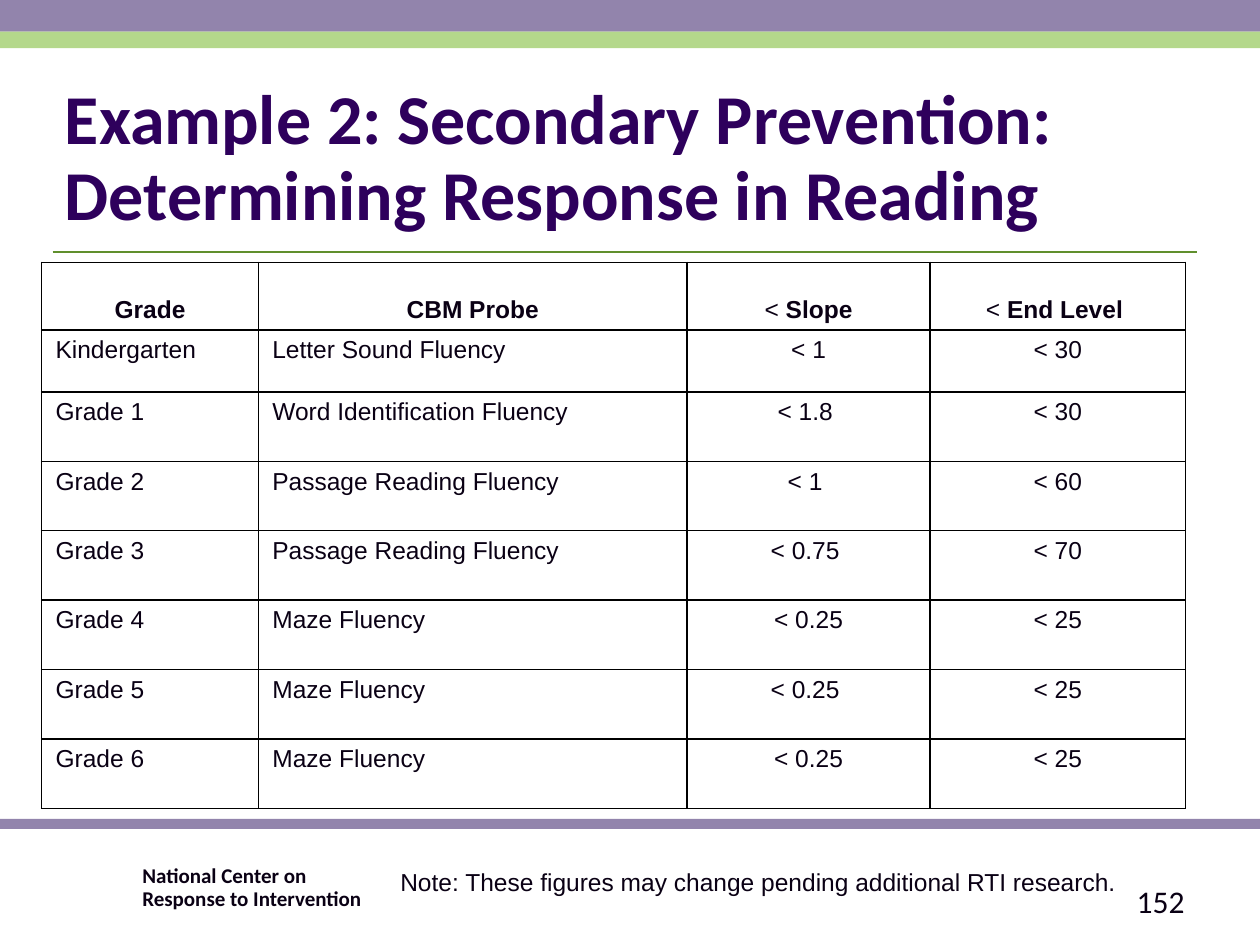
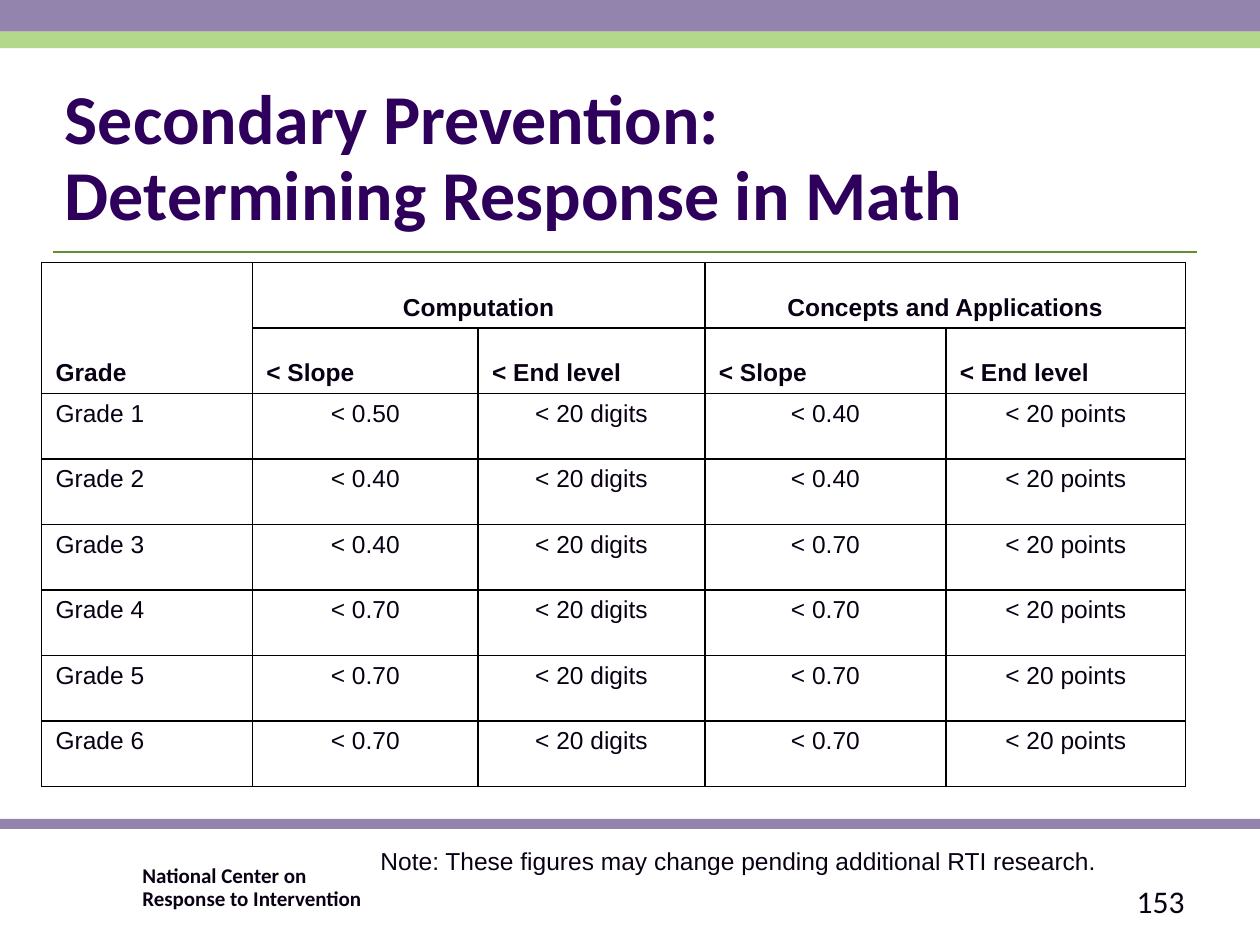
from lxml import etree
from pptx import Presentation
from pptx.dml.color import RGBColor
from pptx.enum import shapes, text
from pptx.oxml.ns import qn
from pptx.util import Cm, Pt

COLORS = {"purple": "9284AC", "green": "B4D88B", "rule": "608F2D", "title": "2E005C",
          "ink": "0A0014", "grid": "000000", "paper": "FFFFFF"}
LEFT, CENTER, RIGHT = text.PP_ALIGN.LEFT, text.PP_ALIGN.CENTER, text.PP_ALIGN.RIGHT
TOP, MIDDLE, BOTTOM = text.MSO_ANCHOR.TOP, text.MSO_ANCHOR.MIDDLE, text.MSO_ANCHOR.BOTTOM

WIDTH, HEIGHT = 25.4, 19.05
BANDS = [(0, 0.64, "purple"), (0.64, 0.33, "green"), (16.51, 0.2, "purple")]
CENTER_NAME = "National Center on \vResponse to Intervention"
NOTE = "Note: These figures may change pending additional RTI research."

READING = [
    ["Grade", "CBM Probe", "Slope", "End Level "],
    ["Kindergarten", "Letter Sound Fluency", "< 1", "< 30"],
    ["Grade 1", "Word Identification Fluency", "< 1.8 ", "< 30"],
    ["Grade 2", "Passage Reading Fluency", "< 1 ", "< 60"],
    ["Grade 3", "Passage Reading Fluency", "< 0.75 ", "< 70"],
    ["Grade 4", "Maze Fluency", "< 0.25", "< 25"],
    ["Grade 5", "Maze Fluency", "< 0.25 ", "< 25"],
    ["Grade 6", "Maze Fluency", "< 0.25", "< 25"],
]
MATH_SLOPES = [("0.50", "0.40"), ("0.40", "0.40"), ("0.40", "0.70"),
               ("0.70", "0.70"), ("0.70", "0.70"), ("0.70", "0.70")]
MATH = [
    ["Grade", "Computation", "", "Concepts and Applications", ""],
    ["", "< Slope", "< End level", "< Slope", "< End level"],
] + [[f"Grade {i}", f"< {comp}", "< 20 digits", f"< {concepts}", "< 20 points"]
     for i, (comp, concepts) in enumerate(MATH_SLOPES, 1)]

SLIDES = [
    {"title": "Example 2: Secondary Prevention:\vDetermining Response in Reading",
     "number": "152", "note": (7.82, 17.35, 19.48, 0.85), "rows": READING,
     "cols": [4.37, 8.64, 4.9, 5.15], "heights": [1.36, 1.25] + [1.4] * 6,
     "header_aligns": [[CENTER] * 4], "aligns": [LEFT, LEFT, CENTER, CENTER],
     "plain_sign_cols": (2, 3), "merges": []},
    {"title": "Secondary Prevention:\vDetermining Response in Math",
     "number": "153", "note": (7.42, 16.93, 19.68, 0.85), "rows": MATH,
     "cols": [4.25, 4.55, 4.57, 4.86, 4.83], "heights": [1.32] * 8,
     "header_aligns": [[LEFT] + [CENTER] * 4, [LEFT] * 5], "aligns": [LEFT] + [CENTER] * 4,
     "plain_sign_cols": (), "merges": [(0, 0, 1, 0), (0, 1, 0, 2), (0, 3, 0, 4)]},
]


def rgb(name):
    return RGBColor.from_string(COLORS[name])


def add_run(p, txt, size, font="Calibri", color="ink", bold=False):
    for i, part in enumerate(txt.split("\v")):
        if i:
            p.add_line_break()
        r = p.add_run()
        r.text = part
        r.font.size, r.font.name, r.font.bold = Pt(size), font, bold
        r.font.color.rgb = rgb(color)


def add_text(s, box, txt, size, anchor=TOP, align=LEFT, spacing=None, inset=None, **style):
    tf = s.shapes.add_textbox(*map(Cm, box)).text_frame
    tf.word_wrap, tf.vertical_anchor = True, anchor
    if inset is not None:
        tf.margin_left = tf.margin_right = tf.margin_top = tf.margin_bottom = Cm(inset)
    p = tf.paragraphs[0]
    p.alignment = align
    if spacing:
        p.line_spacing = spacing
    add_run(p, txt, size, **style)


def add_frame(s, title, number):
    for top, height, color in BANDS:
        sp = s.shapes.add_shape(shapes.MSO_SHAPE.RECTANGLE, 0, Cm(top), Cm(WIDTH), Cm(height))
        sp.shadow.inherit = False
        sp.fill.solid()
        sp.fill.fore_color.rgb = rgb(color)
        sp.line.fill.background()
    rule = s.shapes.add_connector(shapes.MSO_CONNECTOR.STRAIGHT,
                                  Cm(1.06), Cm(5.08), Cm(24.13), Cm(5.08))
    rule.line.color.rgb, rule.line.width = rgb("rule"), Pt(0.75)
    etree.SubElement(rule._element.spPr, qn("a:effectLst"))
    add_text(s, (2.77, 17.35, 8.23, 0.76), CENTER_NAME, 12, spacing=0.9, inset=0.1, bold=True)
    add_text(s, (1.06, 2.12, 23.07, 2.75), title, 40, BOTTOM, spacing=0.9,
             color="title", bold=True)
    add_text(s, (18.2, 17.65, 5.93, 1.02), number, 18, MIDDLE, RIGHT)


def style_cell(cell, anchor):
    tcPr = cell._tc.get_or_add_tcPr()
    for side in ("lnL", "lnR", "lnT", "lnB"):
        ln = etree.SubElement(tcPr, qn(f"a:{side}"), w=str(Pt(1)))
        fill = etree.SubElement(ln, qn("a:solidFill"))
        etree.SubElement(fill, qn("a:srgbClr"), val=COLORS["grid"])
    cell.fill.solid()
    cell.fill.fore_color.rgb = rgb("paper")
    cell.margin_left = cell.margin_right = Cm(0.28)
    cell.margin_top = cell.margin_bottom = Cm(0.13)
    cell.vertical_anchor = anchor


def add_grid(s, d):
    rows, cols, heights = d["rows"], d["cols"], d["heights"]
    tbl = s.shapes.add_table(len(rows), len(cols), Cm(0.84), Cm(5.29),
                             Cm(sum(cols)), Cm(sum(heights))).table
    tbl.first_row = tbl.horz_banding = False
    for col, width in zip(tbl.columns, cols):
        col.width = Cm(width)
    for row, height in zip(tbl.rows, heights):
        row.height = Cm(height)
    for r0, c0, r1, c1 in d["merges"]:
        tbl.cell(r0, c0).merge(tbl.cell(r1, c1))
    for i, row in enumerate(rows):
        header = i < len(d["header_aligns"])
        aligns = d["header_aligns"][i] if header else d["aligns"]
        for j, txt in enumerate(row):
            cell = tbl.cell(i, j)
            style_cell(cell, BOTTOM if header else TOP)
            if not txt:
                continue
            p = cell.text_frame.paragraphs[0]
            p.alignment = aligns[j]
            pPr = p._p.get_or_add_pPr()
            pPr.set("marL", str(Cm(0.95)))
            pPr.set("indent", str(-Cm(0.95)))
            if header and j in d["plain_sign_cols"]:
                add_run(p, "< ", 14, "Arial")
            add_run(p, txt, 14, "Arial", bold=header)


def main():
    prs = Presentation()
    prs.slide_width, prs.slide_height = Cm(WIDTH), Cm(HEIGHT)
    for d in SLIDES:
        s = prs.slides.add_slide(prs.slide_layouts[6])
        add_frame(s, d["title"], d["number"])
        add_grid(s, d)
        add_text(s, d["note"], NOTE, 14, font="Arial")
    prs.save("out.pptx")


if __name__ == "__main__":
    main()
